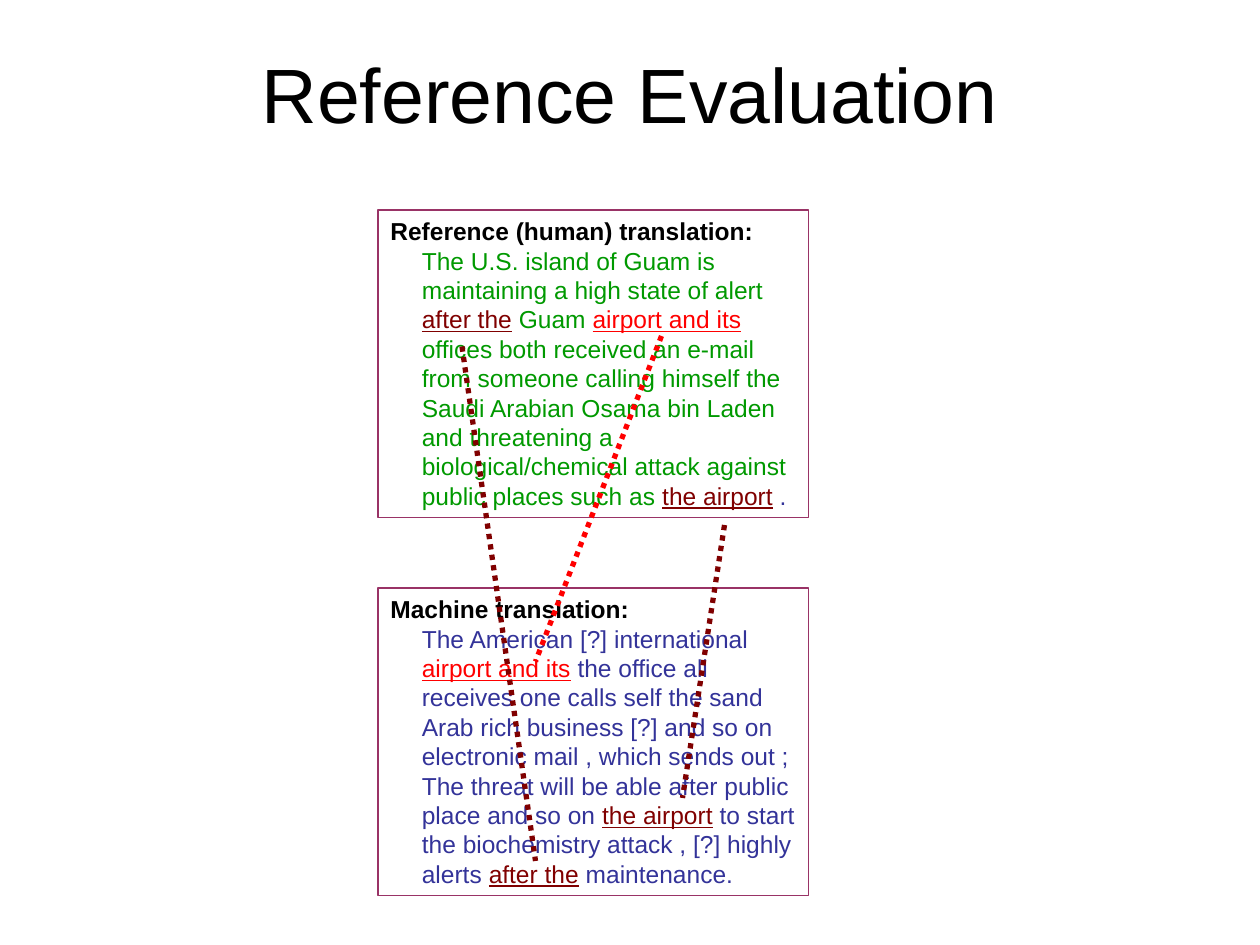
from dataclasses import dataclass

from lxml import etree
from pptx import Presentation
from pptx import util as u
from pptx.dml.color import RGBColor
from pptx.enum import dml, shapes, text
from pptx.oxml.ns import qn


@dataclass(frozen=True)
class Theme:
    font: str = "Arial"
    title_size: int = 44
    body_size: int = 14
    paper: str = "FFFFFF"
    ink: str = "000000"
    border: str = "993366"
    human: str = "009900"
    machine: str = "333399"
    match: str = "800000"
    long_match: str = "FF0000"


@dataclass(frozen=True)
class Span:
    text: str
    color: str
    underline: bool = False


@dataclass(frozen=True)
class Passage:
    row: float
    heading: str
    spans: tuple[Span, ...]


@dataclass(frozen=True)
class MatchLine:
    start: tuple[float, float]
    end: tuple[float, float]
    color: str


THEME = Theme()
COLS, ROWS = 120, 90
WIDTH, HEIGHT = u.Inches(10), u.Inches(7.5)
PASSAGE_COL, PASSAGE_COLS, PASSAGE_ROWS = 36, 41, 29.28

AFTER_THE = Span("after the", THEME.match, True)
THE_AIRPORT = Span("the airport", THEME.match, True)
AIRPORT_AND_ITS = Span("airport and its", THEME.long_match, True)

PASSAGES = (
    Passage(20, "Reference (human) translation:", (
        Span("The U.S. island of Guam is maintaining a high state of alert ", THEME.human),
        AFTER_THE,
        Span(" Guam ", THEME.human),
        AIRPORT_AND_ITS,
        Span(" offices both received an e-mail from someone calling himself "
             "the Saudi Arabian Osama bin Laden and threatening a "
             "biological/chemical attack against public places such as ", THEME.human),
        THE_AIRPORT,
        Span(" .", THEME.machine),
    )),
    Passage(56, "Machine translation:", (
        Span("The American [?] international ", THEME.machine),
        AIRPORT_AND_ITS,
        Span(" the office all receives one calls self the sand Arab rich "
             "business [?] and so on electronic mail , which sends out ; "
             "The threat will be able after public place and so on ", THEME.machine),
        THE_AIRPORT,
        Span(" to start the biochemistry attack , [?] highly alerts ", THEME.machine),
        AFTER_THE,
        Span(" maintenance.", THEME.machine),
    )),
)

MATCH_LINES = (
    MatchLine((63, 32), (51, 63), THEME.long_match),
    MatchLine((44, 33), (51, 82), THEME.match),
    MatchLine((69, 50), (65, 76), THEME.match),
)


def x(cols: float) -> int:
    return round(WIDTH * cols / COLS)


def y(rows: float) -> int:
    return round(HEIGHT * rows / ROWS)


def rgb(color: str) -> RGBColor:
    return RGBColor.from_string(color)


def format_run(r, size: int, color: str, bold: bool = False, underline: bool = False) -> None:
    r.font.name = THEME.font
    r.font.size = u.Pt(size)
    r.font.bold = bold
    r.font.underline = underline
    r.font.color.rgb = rgb(color)


def set_title(s, title: str) -> None:
    sp = s.shapes.title
    sp.left, sp.top, sp.width, sp.height = x(6), y(3.6), x(108), y(15)
    tf = sp.text_frame
    tf.text = title
    tf.vertical_anchor = text.MSO_ANCHOR.MIDDLE
    tf.margin_bottom = u.Inches(0.43)
    p = tf.paragraphs[0]
    p.alignment = text.PP_ALIGN.CENTER
    format_run(p.runs[0], THEME.title_size, THEME.ink)


def draw_passage(s, passage: Passage) -> None:
    sp = s.shapes.add_shape(shapes.MSO_SHAPE.RECTANGLE, x(PASSAGE_COL), y(passage.row),
                            x(PASSAGE_COLS), y(PASSAGE_ROWS))
    sp.shadow.inherit = False
    sp.fill.solid()
    sp.fill.fore_color.rgb = rgb(THEME.paper)
    sp.line.color.rgb = rgb(THEME.border)
    sp.line.width = u.Pt(0.75)
    tf = sp.text_frame
    tf.word_wrap = True
    tf.auto_size = text.MSO_AUTO_SIZE.SHAPE_TO_FIT_TEXT
    tf.vertical_anchor = text.MSO_ANCHOR.TOP
    p = tf.paragraphs[0]
    p.alignment = text.PP_ALIGN.LEFT
    indent = u.Inches(0.25)
    pPr = p._p.get_or_add_pPr()
    pPr.set("marL", str(indent))
    pPr.set("indent", str(-indent))
    r = p.add_run()
    r.text = passage.heading
    format_run(r, THEME.body_size, THEME.ink, bold=True)
    p.add_line_break()
    for span in passage.spans:
        r = p.add_run()
        r.text = span.text
        format_run(r, THEME.body_size, span.color, underline=span.underline)


def draw_match_line(s, match: MatchLine) -> None:
    (x1, y1), (x2, y2) = match.start, match.end
    line = s.shapes.add_connector(shapes.MSO_CONNECTOR.STRAIGHT, x(x1), y(y1), x(x2), y(y2))
    line.line.color.rgb = rgb(match.color)
    line.line.width = u.Pt(3)
    line.line.dash_style = dml.MSO_LINE.ROUND_DOT
    etree.SubElement(line._element.spPr, qn("a:effectLst"))


def main() -> None:
    prs = Presentation()
    prs.slide_width, prs.slide_height = WIDTH, HEIGHT
    s = prs.slides.add_slide(prs.slide_layouts[5])
    set_title(s, "Reference Evaluation")
    for passage in PASSAGES:
        draw_passage(s, passage)
    for match in MATCH_LINES:
        draw_match_line(s, match)
    prs.save("out.pptx")


if __name__ == "__main__":
    main()
